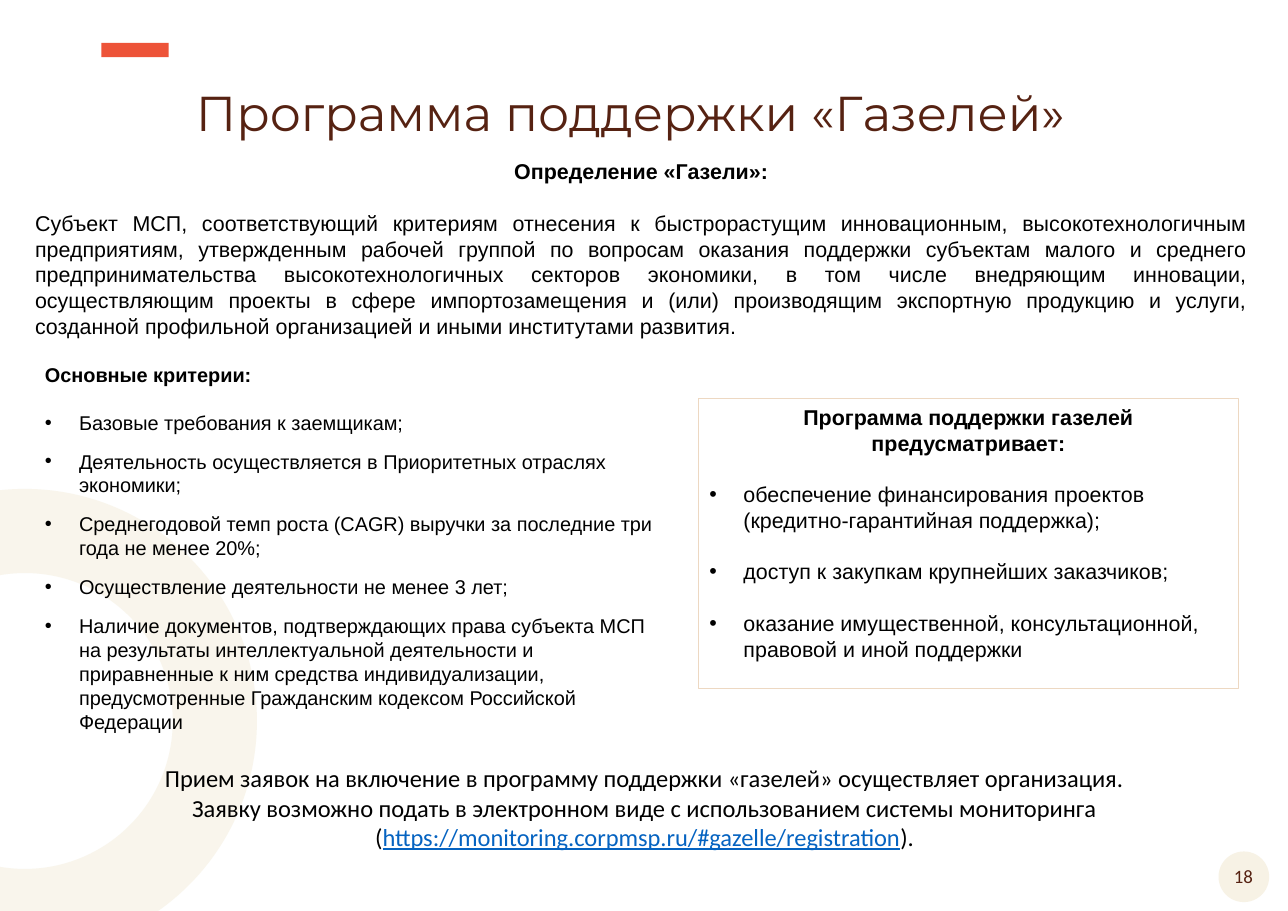
"""Builds the slide about the support programme for fast-growing "gazelle" companies."""
from lxml import etree
from pptx import Presentation
from pptx.dml.color import RGBColor
from pptx.enum.shapes import MSO_SHAPE
from pptx.enum.text import MSO_ANCHOR, PP_ALIGN
from pptx.oxml.ns import qn
from pptx.util import Inches, Pt

BROWN, ORANGE, CREAM, SAND = "562212", "ED5338", "F7F2E5", "EDD8C2"
BLACK, LINK_BLUE = "000000", "0563C1"
LEFT, CENTER, JUSTIFY = PP_ALIGN.LEFT, PP_ALIGN.CENTER, PP_ALIGN.JUSTIFY

TITLE = "Программа поддержки «Газелей»"
PAGE_NUMBER = "18"
DEFINITION_HEADING = "Определение «Газели»:"
DEFINITION = (
    "Cубъект МСП, соответствующий критериям отнесения к быстрорастущим инновационным, "
    "высокотехнологичным предприятиям, утвержденным рабочей группой по вопросам оказания "
    "поддержки субъектам малого и среднего предпринимательства высокотехнологичных секторов "
    "экономики, в том числе внедряющим инновации, осуществляющим проекты в сфере "
    "импортозамещения и (или) производящим экспортную продукцию и услуги, созданной "
    "профильной организацией и иными институтами развития."
)
CRITERIA_HEADING = "Основные критерии:"
CRITERIA = [
    "Базовые требования к заемщикам;",
    "Деятельность осуществляется в Приоритетных отраслях экономики;",
    "Среднегодовой темп роста (CAGR) выручки за последние три года не менее 20%;",
    "Осуществление деятельности не менее 3 лет;",
    "Наличие документов, подтверждающих права субъекта МСП на результаты интеллектуальной "
    "деятельности и приравненные к ним средства индивидуализации, предусмотренные "
    "Гражданским кодексом Российской Федерации",
]
SUPPORT_HEADING = "Программа поддержки газелей предусматривает:"
SUPPORT = [
    "обеспечение финансирования проектов (кредитно-гарантийная поддержка);",
    "доступ к закупкам крупнейших заказчиков;",
    "оказание имущественной, консультационной, правовой и иной поддержки",
]
APPLY = "Прием заявок на включение в программу поддержки «газелей» осуществляет организация."
APPLY_ONLINE = [
    "Заявку возможно подать в электронном виде с использованием системы мониторинга (",
    "https://monitoring.corpmsp.ru/#gazelle/registration",
    ").",
]


def color(value):
    return RGBColor.from_string(value)


def add_figure(slide, kind, box, fill=None, line=None, width=0.75):
    shape = slide.shapes.add_shape(kind, *map(Inches, box))
    shape.shadow.inherit = False
    if fill:
        shape.fill.solid()
        shape.fill.fore_color.rgb = color(fill)
    else:
        shape.fill.background()
    if line:
        shape.line.color.rgb = color(line)
        shape.line.width = Pt(width)
    else:
        shape.line.fill.background()
    return shape


def add_text_box(slide, box):
    return slide.shapes.add_textbox(*map(Inches, box)).text_frame


def format_runs(paragraph, font, size, fill, bold=False):
    for run in paragraph.runs:
        run.font.name = font
        run.font.size = Pt(size)
        run.font.bold = bold
        run.font.color.rgb = color(fill)


def write(frame, text, size, align=CENTER, font="Arial", fill=BLACK,
          bold=False, before=0, bullet=False):
    """Fills the first paragraph of a frame, or adds one below the others."""
    frame.word_wrap = True
    paragraph = frame.add_paragraph() if frame.text else frame.paragraphs[0]
    paragraph.text = text
    paragraph.alignment = align
    if before:
        paragraph.space_before = Pt(before)
    if bullet:
        properties = paragraph._p.get_or_add_pPr()
        properties.set("marL", str(Inches(0.31)))
        properties.set("indent", str(-Inches(0.31)))
        etree.SubElement(properties, qn("a:buFont")).set("typeface", "Arial")
        etree.SubElement(properties, qn("a:buChar")).set("char", "•")
    format_runs(paragraph, font, size, fill, bold)
    return paragraph


def write_list(frame, heading, items, size, heading_align, heading_gap, item_gap):
    write(frame, heading, size, heading_align, bold=True)
    for index, item in enumerate(items):
        gap = item_gap if index else heading_gap
        write(frame, item, size, LEFT, before=gap, bullet=True)


def main():
    presentation = Presentation()
    presentation.slide_width, presentation.slide_height = Inches(11.69), Inches(8.27)
    slide = presentation.slides.add_slide(presentation.slide_layouts[6])

    add_figure(slide, MSO_SHAPE.OVAL, (11.06, 7.73, 0.46, 0.46), fill=CREAM)
    number = add_text_box(slide, (11.03, 7.8, 0.51, 0.31))
    write(number, PAGE_NUMBER, 12.3, font="Calibri", fill=BROWN)
    add_figure(slide, MSO_SHAPE.RECTANGLE, (0.92, 0.39, 0.61, 0.13), fill=ORANGE)

    title = add_text_box(slide, (0.4, 0.78, 10.65, 0.56))
    write(title, TITLE, 32, font="Montserrat", fill=BROWN).line_spacing = 0.85

    ring = add_figure(slide, MSO_SHAPE.OVAL, (-1.5, 4.82, 3.45, 3.45), line=CREAM, width=55)
    ring_color = ring.line._ln.find(".//" + qn("a:srgbClr"))
    etree.SubElement(ring_color, qn("a:alpha")).set("val", "71000")

    support = add_figure(slide, MSO_SHAPE.RECTANGLE, (6.34, 3.62, 4.9, 2.63), line=SAND)
    support.text_frame.vertical_anchor = MSO_ANCHOR.TOP
    write_list(support.text_frame, SUPPORT_HEADING, SUPPORT, 14, CENTER, 16.8, 16.8)

    apply_frame = add_text_box(slide, (0.4, 6.88, 10.9, 0.91))
    write(apply_frame, APPLY, 16, font="Calibri")
    online = write(apply_frame, APPLY_ONLINE[0], 16, font="Calibri")
    for part in APPLY_ONLINE[1:]:
        online.add_run().text = part
    format_runs(online, "Calibri", 16, BLACK)
    address = online.runs[1].font
    address.color.rgb = color(LINK_BLUE)
    address.underline = True

    definition = add_text_box(slide, (0.22, 1.39, 11.2, 1.75))
    write(definition, DEFINITION_HEADING, 14, bold=True)
    write(definition, DEFINITION, 14, JUSTIFY, before=16.8)

    criteria = add_text_box(slide, (0.31, 3.24, 5.87, 3.48))
    write_list(criteria, CRITERIA_HEADING, CRITERIA, 13, LEFT, 15.7, 9.8)

    presentation.save("out.pptx")


if __name__ == "__main__":
    main()
